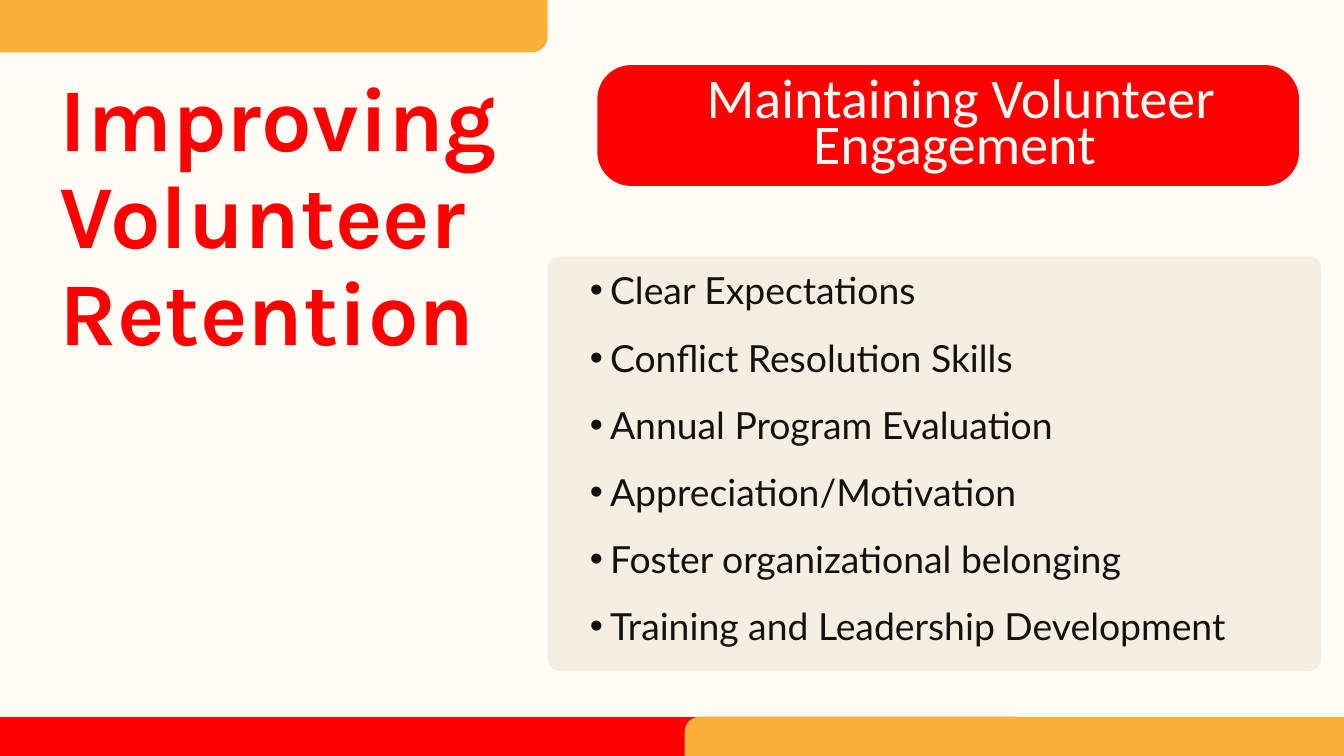
"""Build the volunteer retention slide."""
from lxml import etree
from pptx import Presentation
from pptx import util as u
from pptx.dml.color import RGBColor
from pptx.enum import shapes, text
from pptx.oxml import ns

COLORS = {
    "page": "FFFBF5",
    "red": "FF0000",
    "amber": "FBB03B",
    "cream": "F6EEE1",
    "ink": "121212",
}
TOPICS = [
    "Clear Expectations",
    "Conflict Resolution Skills",
    "Annual Program Evaluation",
    "Appreciation/Motivation",
    "Foster organizational belonging",
    "Training and Leadership Development",
]


def color(name):
    """Return the named colour."""
    return RGBColor.from_string(COLORS[name])


def panel(slide, box, fill, round_by=0):
    """Add a plain panel whose corners are rounded by a share of its height."""
    kind = shapes.MSO_SHAPE.ROUNDED_RECTANGLE if round_by else shapes.MSO_SHAPE.RECTANGLE
    shape = slide.shapes.add_shape(kind, *map(u.Cm, box))
    if round_by:
        shape.adjustments[0] = round_by
    shape.shadow.inherit = False
    shape.fill.solid()
    shape.fill.fore_color.rgb = color(fill)
    shape.line.fill.background()


def bullet(para):
    """Give a paragraph a round bullet with a hanging indent."""
    props = para._p.get_or_add_pPr()
    props.set("marL", str(u.Cm(1.5)))
    props.set("indent", str(u.Cm(-0.76)))
    etree.SubElement(props, ns.qn("a:buFont")).set("typeface", "Arial")
    etree.SubElement(props, ns.qn("a:buChar")).set("char", "•")


def words(slide, box, lines, face, size, ink, space,
          bold=False, align=text.PP_ALIGN.LEFT, listed=False):
    """Add a text box with one paragraph for each line."""
    frame = slide.shapes.add_textbox(*map(u.Cm, box)).text_frame
    frame.word_wrap = True
    frame.auto_size = text.MSO_AUTO_SIZE.SHAPE_TO_FIT_TEXT
    frame.margin_left = frame.margin_top = frame.margin_right = frame.margin_bottom = 0
    for i, line in enumerate(lines):
        para = frame.add_paragraph() if i else frame.paragraphs[0]
        para.text = line
        para.alignment = align
        para.line_spacing = space
        if listed:
            para.level = 1
            bullet(para)
        font = para.font
        font.name, font.size, font.bold = face, u.Pt(size), bold
        font.color.rgb = color(ink)


def main():
    """Build and save the slide."""
    deck = Presentation()
    deck.slide_width, deck.slide_height = u.Cm(50.8), u.Cm(28.58)
    slide = deck.slides.add_slide(deck.slide_layouts[6])
    slide.background.fill.solid()
    slide.background.fill.fore_color.rgb = color("page")

    words(slide, (2.26, 2.74, 18.01, 11.25), ["Improving Volunteer Retention"],
          "Karla", 96, "red", u.Pt(104), bold=True)
    panel(slide, (-2.57, 27.1, 40.92, 4.95), "red")
    panel(slide, (25.88, 27.1, 32.59, 3.96), "amber", 0.14)
    panel(slide, (20.7, 9.7, 29.24, 15.67), "cream", 0.03)
    words(slide, (21.56, 9.27, 26.95, 15.09), TOPICS,
          "Lato", 40, "ink", 1.5, listed=True)
    panel(slide, (22.58, 2.46, 26.52, 4.57), "red", 0.28)
    words(slide, (25.4, 3.18, 21.36, 3.61), [" Maintaining Volunteer Engagement"],
          "Calibri", 60, "page", u.Pt(49.1), align=text.PP_ALIGN.CENTER)
    panel(slide, (-9.93, -1.98, 30.63, 3.96), "amber", 0.15)
    deck.save("out.pptx")


if __name__ == "__main__":
    main()
